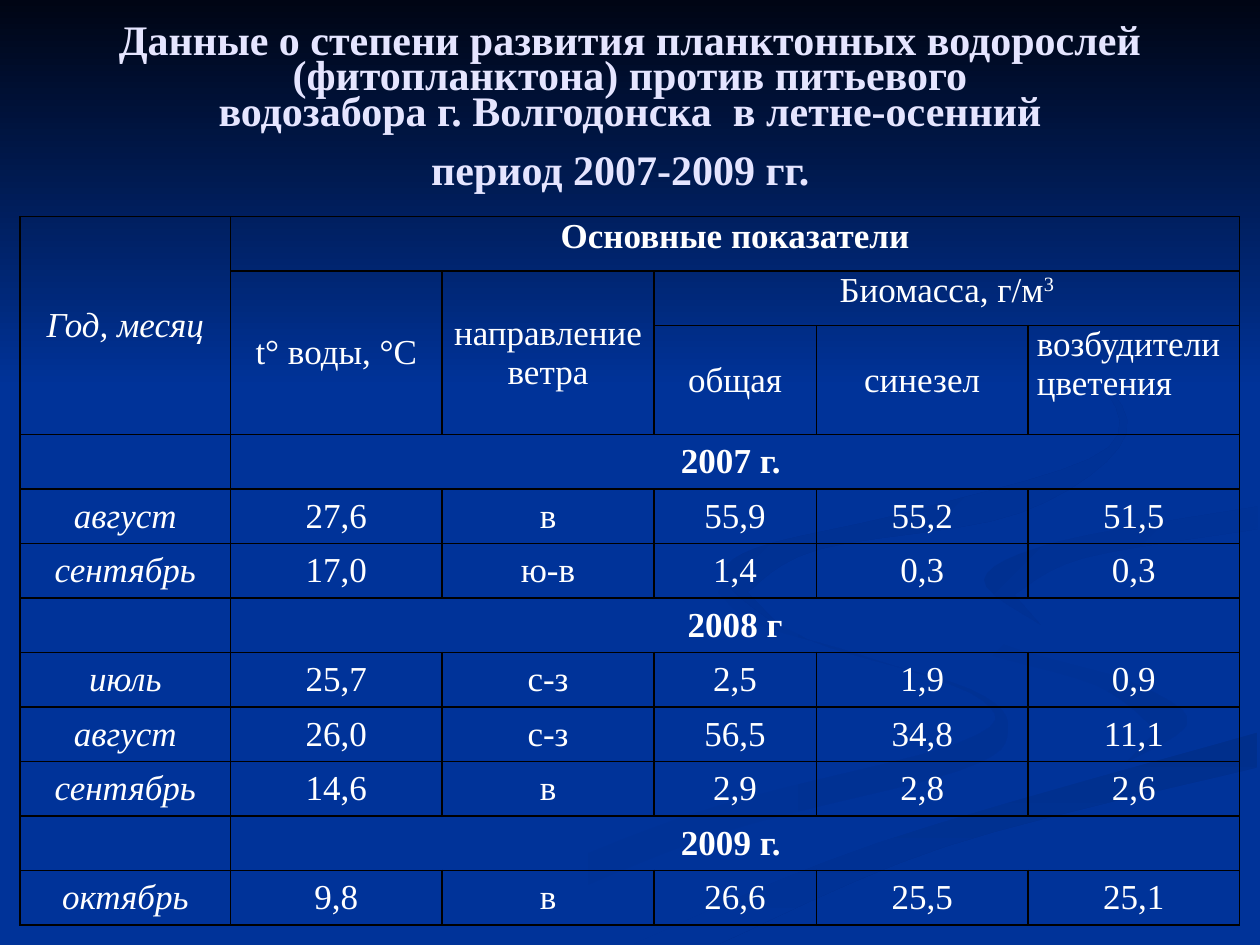
from typing import NamedTuple

from lxml.etree import SubElement
from pptx import Presentation
from pptx.dml.color import RGBColor
from pptx.enum.shapes import MSO_SHAPE
from pptx.enum.text import MSO_ANCHOR, PP_ALIGN
from pptx.oxml.ns import qn
from pptx.shapes.autoshape import Shape
from pptx.slide import Slide
from pptx.table import Table, _Cell
from pptx.text.text import _Paragraph
from pptx.util import Inches, Pt

FONT = "Times New Roman"
BLUE = "003399"
WHITE = "FFFFFF"
BLACK = "000000"
TITLE_COLOR = "E5E5FF"
CURVE_STEPS = 6

Edge = list[tuple[float, float]]


class Ribbon(NamedTuple):
    start_color: str
    end_color: str
    angle: int  # clockwise
    edges: list[Edge]


class TextCell(NamedTuple):
    row: int
    column: int
    text: str
    rows: int = 1
    columns: int = 1
    anchor: MSO_ANCHOR = MSO_ANCHOR.MIDDLE
    align: PP_ALIGN = PP_ALIGN.CENTER
    bold: bool = False
    italic: bool = False
    superscript: str = ""


RIBBONS = [
    Ribbon(BLUE, "003193", 0, [
        [(5.7, 4.7), (6, 4.95), (6.8, 5.19), (7.8, 5.56), (7.6, 5.9), (5.4, 6.49), (3, 7.49)],
        [(3.61, 7.49), (5.6, 6.65), (7.6, 6.12), (8, 5.8), (7.7, 5.47), (6.4, 5.07), (5.75, 4.59)]]),
    Ribbon(BLUE, "003193", 45, [
        [(7.24, 4.64), (7.6, 4.98), (8.7, 5.3), (9.43, 5.7), (8.94, 6.05)],
        [(9.18, 5.8), (8.7, 5.44), (7.6, 5.1), (7.24, 4.64)]]),
    Ribbon("002F8C", BLUE, 90, [
        [(5.03, 7.49), (6.96, 6.69), (9.98, 5.81)],
        [(9.98, 6.09), (7.5, 6.72), (5.71, 7.49)]]),
    Ribbon(BLUE, BLUE, 0, [
        [(9.99, 3.87), (7.9, 4.22), (7.25, 4.64), (7.9, 5.09), (9.3, 5.53), (9.1, 6),
         (7, 6.55), (4.77, 7.49)],
        [(5.03, 7.49), (6.96, 6.69), (9.99, 5.81)],
        [(9.99, 5.38), (8.3, 4.98), (7.82, 4.6), (8.5, 4.27), (9.99, 4.02)]]),
    Ribbon("003091", BLUE, 45, [
        [(9.98, 4.02), (8.4, 4.3), (7.81, 4.6), (8.26, 4.96)],
        [(8.05, 4.72), (8.6, 4.43), (9.98, 4.2)]]),
    Ribbon("002F8E", BLUE, 45, [
        [(7.62, 2.33), (8.6, 2.9), (8.8, 3.55), (7.3, 4.04), (6, 4.35), (5.77, 4.62), (6.22, 5)],
        [(5.93, 4.7), (6.5, 4.36), (8.1, 4.07), (8.94, 3.44), (8.5, 2.8), (7.62, 2.33)]]),
]

TITLE_LINES = [
    "Данные о степени развития планктонных водорослей (фитопланктона) против питьевого",
    " водозабора г. Волгодонска  в летне-осенний ",
    "период 2007-2009 гг.",
]

COLUMN_WIDTHS = [1.67, 1.68, 1.68, 1.29, 1.68, 1.68]
ROW_HEIGHT = 5.62 / 13
TALL_ROW = 2  # twice the height of the others

HEADER = [
    TextCell(0, 0, "Год, месяц", rows=3, italic=True),
    TextCell(0, 1, "Основные показатели", columns=5, anchor=MSO_ANCHOR.TOP, bold=True),
    TextCell(1, 1, "t° воды, °С", rows=2),
    TextCell(1, 2, "направление ветра", rows=2),
    TextCell(1, 3, "Биомасса, г/м", columns=3, anchor=MSO_ANCHOR.TOP, superscript="3"),
    TextCell(2, 3, "общая"),
    TextCell(2, 4, "синезел"),
    TextCell(2, 5, "возбудители цветения", anchor=MSO_ANCHOR.TOP, align=PP_ALIGN.JUSTIFY),
]
BODY = [
    ["2007 г. "],
    ["август", "27,6", "в", "55,9", "55,2", "51,5"],
    ["сентябрь", "17,0", "ю-в", "1,4", "0,3", "0,3"],
    ["2008 г"],
    ["июль", "25,7", "с-з", "2,5", "1,9", "0,9"],
    ["август", "26,0", "с-з", "56,5", "34,8", "11,1"],
    ["сентябрь", "14,6", "в", "2,9", "2,8", "2,6"],
    ["2009 г. "],
    ["октябрь", "9,8", "в", "26,6", "25,5", "25,1"],
]


def rgb(value: str) -> RGBColor:
    return RGBColor.from_string(value)


def smooth(edge: Edge) -> Edge:
    """Pass a Catmull-Rom curve through the points of an edge."""
    padded = [edge[0], *edge, edge[-1]]
    curve = [edge[0]]
    for before, start, end, after in zip(padded, padded[1:], padded[2:], padded[3:]):
        for step in range(1, CURVE_STEPS + 1):
            t = step / CURVE_STEPS
            curve.append(tuple(
                b + t / 2 * (c - a + t * (2 * a - 5 * b + 4 * c - d + t * (3 * (b - c) + d - a)))
                for a, b, c, d in zip(before, start, end, after)))
    return curve


def paint(shape: Shape, start_color: str, end_color: str, angle: int) -> None:
    shape.shadow.inherit = False
    shape.line.fill.background()
    if start_color == end_color:
        shape.fill.solid()
        shape.fill.fore_color.rgb = rgb(start_color)
        return
    shape.fill.gradient()
    shape.fill.gradient_angle = 360 - angle
    for stop, color in zip(shape.fill.gradient_stops, (start_color, end_color)):
        stop.color.rgb = rgb(color)


def add_ribbon(page: Slide, ribbon: Ribbon) -> None:
    corners = [(Inches(x), Inches(y)) for edge in ribbon.edges for x, y in smooth(edge)]
    builder = page.shapes.build_freeform(*corners[0])
    builder.add_line_segments(corners[1:], close=True)
    paint(builder.convert_to_shape(), ribbon.start_color, ribbon.end_color, ribbon.angle)


def add_run(para: _Paragraph, text: str, size: int, color: str,
            bold: bool = False, italic: bool = False, baseline: int = 0) -> None:
    span = para.add_run()
    span.text = text
    font = span.font
    font.name, font.size, font.bold, font.italic = FONT, Pt(size), bold, italic
    font.color.rgb = rgb(color)
    if baseline:
        font._element.set("baseline", str(baseline * 1000))


def add_title(page: Slide) -> None:
    box = page.shapes.add_textbox(Inches(0.5), Inches(0.23), Inches(9), Inches(1.33))
    frame = box.text_frame
    frame.word_wrap = True
    frame.vertical_anchor = MSO_ANCHOR.MIDDLE
    para = frame.paragraphs[0]
    para.alignment = PP_ALIGN.CENTER
    para.line_spacing = 0.7
    for index, line in enumerate(TITLE_LINES):
        if index:
            para.add_line_break()
        add_run(para, line, 24, TITLE_COLOR, bold=True)
    add_run(para, " ", 44, TITLE_COLOR, bold=True)


def style_cell(cell: _Cell) -> None:
    """Clear the fill, set the margins and draw the four borders."""
    cell.margin_left = cell.margin_right = Inches(0.07)
    cell.margin_top = cell.margin_bottom = 0
    properties = cell._tc.get_or_add_tcPr()
    for side in ("lnL", "lnR", "lnT", "lnB"):
        line = SubElement(properties, qn(f"a:{side}"), w=str(Pt(1)))
        SubElement(SubElement(line, qn("a:solidFill")), qn("a:srgbClr"), val=BLACK)
    cell.fill.background()


def fill_cell(table: Table, item: TextCell) -> None:
    cell = table.cell(item.row, item.column)
    if item.rows > 1 or item.columns > 1:
        cell.merge(table.cell(item.row + item.rows - 1, item.column + item.columns - 1))
    cell.vertical_anchor = item.anchor
    para = cell.text_frame.paragraphs[0]
    para.alignment = item.align
    add_run(para, item.text, 20, WHITE, item.bold, item.italic)
    if item.superscript:
        add_run(para, item.superscript, 20, WHITE, baseline=30)


def add_data_table(page: Slide) -> None:
    table = page.shapes.add_table(3 + len(BODY), len(COLUMN_WIDTHS), Inches(0.16), Inches(1.72),
                                  Inches(9.69), Inches(5.62)).table
    table.first_row = table.horz_banding = False
    for column, width in zip(table.columns, COLUMN_WIDTHS):
        column.width = Inches(width)
    for index, row in enumerate(table.rows):
        row.height = Inches(ROW_HEIGHT * (2 if index == TALL_ROW else 1))
    for cell in table.iter_cells():
        style_cell(cell)
    for item in HEADER:
        fill_cell(table, item)
    for row, values in enumerate(BODY, start=3):
        if len(values) == 1:
            fill_cell(table, TextCell(row, 1, values[0], columns=5, bold=True))
            continue
        for column, text in enumerate(values):
            fill_cell(table, TextCell(row, column, text, italic=column == 0))


deck = Presentation()
deck.slide_width, deck.slide_height = Inches(10), Inches(7.5)
page = deck.slides.add_slide(deck.slide_layouts[6])
page.background.fill.solid()
page.background.fill.fore_color.rgb = rgb(BLUE)
for ribbon in RIBBONS:
    add_ribbon(page, ribbon)
banner = page.shapes.add_shape(MSO_SHAPE.RECTANGLE, 0, 0, Inches(10), Inches(3.08))
paint(banner, "000514", BLUE, 90)
add_title(page)
add_data_table(page)
deck.save("out.pptx")
